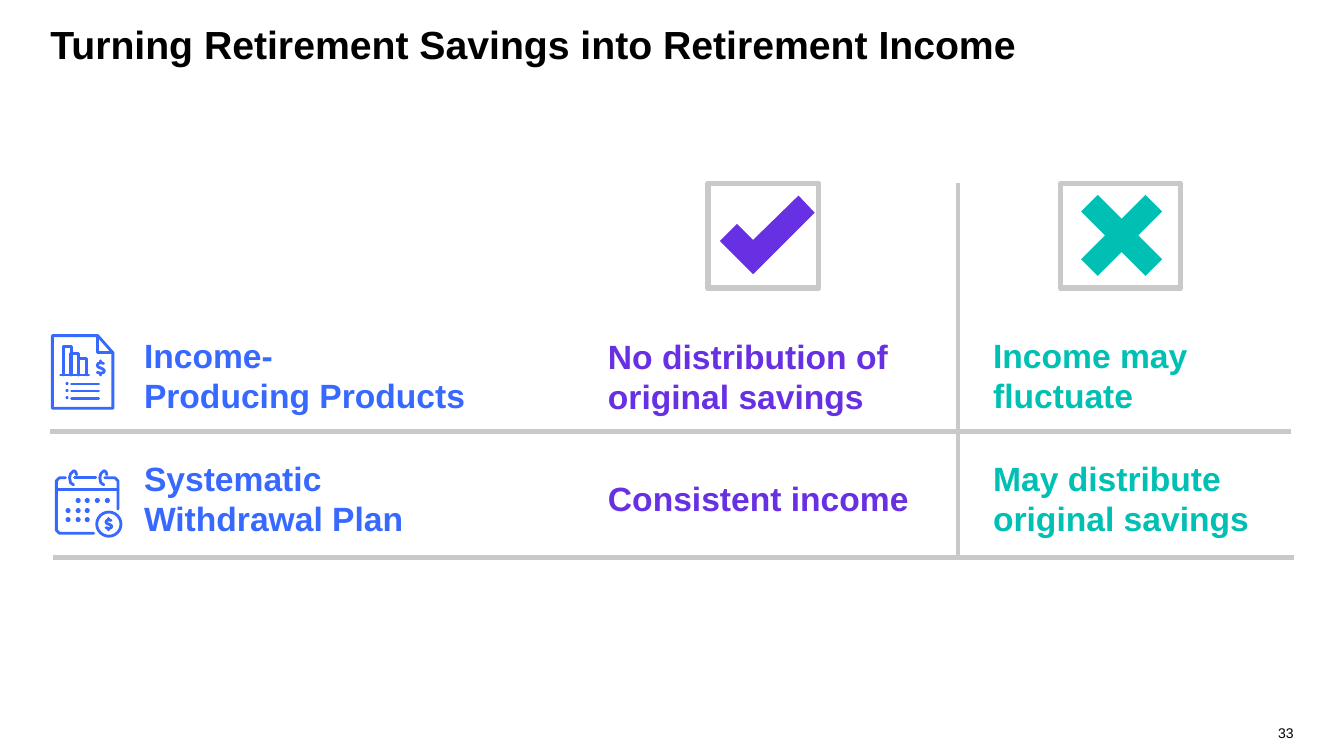
from dataclasses import dataclass

import pptx
import pptx.dml.color
import pptx.enum.shapes
import pptx.enum.text
import pptx.oxml.ns
import pptx.util
from lxml import etree

SHAPE = pptx.enum.shapes.MSO_SHAPE
ALIGN = pptx.enum.text.PP_ALIGN
ANCHOR = pptx.enum.text.MSO_ANCHOR
qn = pptx.oxml.ns.qn


@dataclass(frozen=True)
class Theme:
    font: str = "Arial"
    black: str = "000000"
    white: str = "FFFFFF"
    grey: str = "C9C9C9"
    blue: str = "3769FF"
    purple: str = "6730E3"
    teal: str = "00BFB3"
    title: int = 28
    body: int = 24
    number: int = 10
    rule: int = 3
    frame: int = 4
    icon: int = 2


class Deck:
    PX = 9144  # 100 px to the inch

    def __init__(self, theme):
        self.theme = theme
        self.prs = pptx.Presentation()
        self.prs.slide_width, self.prs.slide_height = self.emu(1333, 750)
        self.s = self.prs.slides.add_slide(self.prs.slide_layouts[6])

    def emu(self, *lengths):
        return [round(v * self.PX) for v in lengths]

    def rgb(self, color):
        return pptx.dml.color.RGBColor.from_string(color)

    def paint(self, sp, fill=None, line=None, width=0):
        sp.shadow.inherit = False
        if fill:
            sp.fill.solid()
            sp.fill.fore_color.rgb = self.rgb(fill)
        else:
            sp.fill.background()
        if line:
            sp.line.color.rgb = self.rgb(line)
            sp.line.width = pptx.util.Pt(width)
        else:
            sp.line.fill.background()

    def text(self, box, text, color, size=None, bold=True, inset=(0, 0),
             align=ALIGN.LEFT, anchor=ANCHOR.TOP):
        tf = self.s.shapes.add_textbox(*self.emu(*box)).text_frame
        tf.word_wrap = True
        tf.vertical_anchor = anchor
        tf.margin_left = tf.margin_right = self.emu(inset[0])[0]
        tf.margin_top = tf.margin_bottom = self.emu(inset[1])[0]
        p = tf.paragraphs[0]
        p.text = text
        p.alignment = align
        for r in p.runs:
            r.font.name = self.theme.font
            r.font.size = pptx.util.Pt(size or self.theme.body)
            r.font.bold = bold
            r.font.color.rgb = self.rgb(color)

    def shape(self, kind, box, fill=None, line=None, width=0):
        sp = self.s.shapes.add_shape(kind, *self.emu(*box))
        self.paint(sp, fill, line, width)
        return sp

    def rule(self, x1, y1, x2, y2):
        c = self.s.shapes.add_connector(
            pptx.enum.shapes.MSO_CONNECTOR.STRAIGHT, *self.emu(x1, y1, x2, y2))
        c.line.color.rgb = self.rgb(self.theme.grey)
        c.line.width = pptx.util.Pt(self.theme.rule)
        etree.SubElement(c.element.spPr, qn("a:effectLst"))

    def outline(self, points, close=False):
        start, *rest = [self.emu(*point) for point in points]
        fb = self.s.shapes.build_freeform(*start, scale=1.0)
        fb.add_line_segments(rest, close=close)
        return fb.convert_to_shape()

    def polygon(self, points, fill):
        self.paint(self.outline(points, True), fill)

    def stroke(self, *points, close=False):
        sp = self.outline(points, close)
        self.paint(sp, None, self.theme.blue, self.theme.icon)
        sp.element.spPr.find(qn("a:ln")).set("cap", "rnd")

    def dot(self, x, y, size):
        self.shape(SHAPE.OVAL, (x, y, size, size), self.theme.blue)

    def dollar(self, cx, cy, size):
        curve = [(3, -5), (0, -6), (-3, -5), (-4, -3), (-3, -1), (2, 1),
                 (4, 3), (3, 5), (0, 6), (-4, 5)]
        for part in (curve, [(0, -8), (0, -6)], [(0, 6), (0, 8)]):
            self.stroke(*[(cx + x * size / 18, cy + y * size / 18)
                          for x, y in part])


def document_icon(d):
    d.stroke((52, 333), (97, 333), (112, 350), (112, 405), (52, 405), close=True)
    d.stroke((97, 333), (97, 350), (112, 350))
    # Bar chart
    d.stroke((60, 372), (88, 372))
    for x, top in ((63, 344), (70, 351), (78, 356)):
        d.stroke((x, 372), (x, top), (x + 8, top), (x + 8, 372))
    d.dollar(100, 365, 16)
    # Bulleted lines
    for y in (379, 386, 393):
        d.dot(65, y, 3)
        d.stroke((71, y + 2), (98, y + 2))


def calendar_icon(d):
    d.stroke((65, 474), (59, 474), (56, 477), (56, 526), (59, 529), (93, 529))
    d.stroke((104, 474), (114, 474), (117, 477), (117, 505))
    d.stroke((56, 486), (117, 486))
    d.stroke((74, 474), (95, 474))
    # Binder rings
    ring = [(76, 471), (75, 468), (73, 467), (70, 470), (69, 474), (70, 479), (73, 481)]
    for shift in (0, 30):
        d.stroke(*[(x + shift, y) for x, y in ring])
    # Days
    for row, columns in enumerate((range(1, 5), range(3), range(3))):
        for column in columns:
            d.dot(round(65 + 9.7 * column), round(494 + 9.5 * row), 5)
    # Coin
    d.shape(SHAPE.OVAL, (96, 508, 24, 24), None, d.theme.blue, d.theme.icon)
    d.dollar(108, 520, 13)


def main():
    t = Theme()
    d = Deck(t)

    # Title and page number
    d.text((50, 20, 1002, 85), "Turning Retirement Savings into Retirement Income",
           t.black, t.title)
    d.text((1243, 715, 40, 20), "33", t.black, t.number, False,
           align=ALIGN.RIGHT, anchor=ANCHOR.BOTTOM)

    # Column heads: check and cross
    d.shape(SHAPE.RECTANGLE, (702, 182, 110, 104), t.white, t.grey, t.frame)
    d.polygon([(747, 238), (731, 222), (714, 239), (747, 272), (808, 211), (792, 194)],
              t.purple)
    d.shape(SHAPE.RECTANGLE, (1052, 182, 119, 104), None, t.grey, t.frame)
    cross = d.shape(SHAPE.MATH_PLUS, (1051, 172, 123, 123), t.teal)
    cross.adjustments[0] = 0.189
    cross.rotation = 315

    # Grid rules
    d.rule(50, 428, 1280, 428)
    d.rule(53, 553, 1283, 553)
    d.rule(950, 182, 950, 555)

    # Row labels
    d.text((133, 327, 368, 91), "Income-\vProducing Products", t.blue, inset=(10, 5))
    d.text((133, 449, 335, 91), "Systematic Withdrawal Plan", t.blue, inset=(10, 5))

    # Advantages and drawbacks
    d.text((603, 333, 307, 81), "No distribution of original savings", t.purple)
    d.text((603, 474, 322, 40), "Consistent income", t.purple)
    d.text((985, 332, 289, 81), "Income may fluctuate", t.teal)
    d.text((985, 454, 300, 81), "May distribute original savings", t.teal)

    # Row icons
    document_icon(d)
    calendar_icon(d)

    d.prs.save("out.pptx")


if __name__ == "__main__":
    main()
